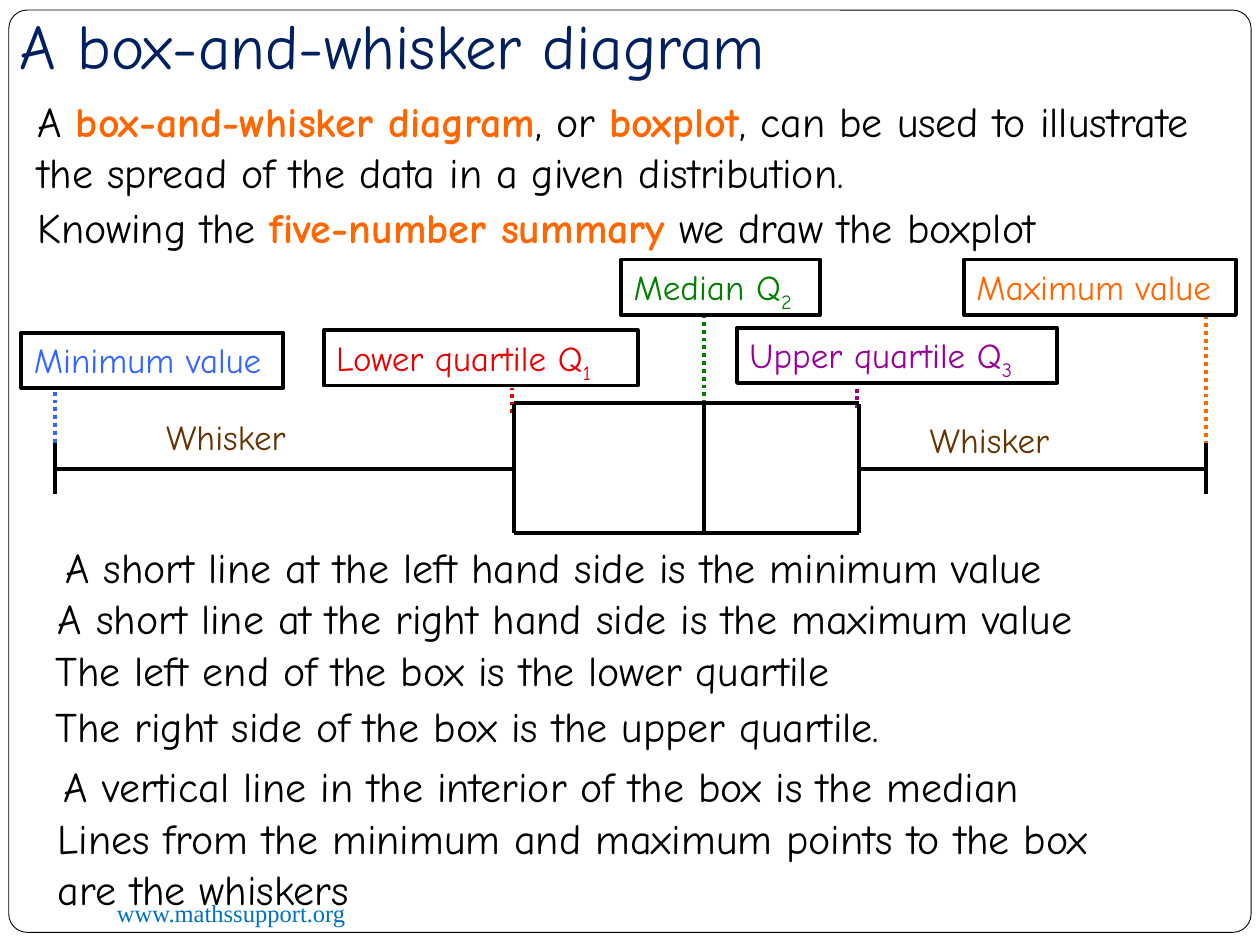
"""Build a slide that explains the box-and-whisker diagram."""
import pptx
import pptx.util
import pptx.dml.color
import pptx.enum.dml
import pptx.enum.shapes
import pptx.enum.text
import pptx.oxml

PX = 9144
FONT = "Comic Neue"
BLACK, WHITE, ORANGE, BROWN = "000000", "FFFFFF", "FF6600", "663300"
TITLE = ("A box-and-whisker diagram", (6, 1, 850, 74))
FOOTER = ("www.mathssupport.org", (83, 708, 325, 34))

# Text between asterisks is a highlighted key term.
STATEMENTS = [
    ("A *box-and-whisker diagram*, or *boxplot*, can be used to illustrate "
     "the spread of the data in a given distribution.", (20, 71, 947, 91)),
    ("Knowing the *five-number summary* we draw the boxplot", (20, 155, 966, 50)),
    ("The left end of the box is the lower quartile", (34, 507, 903, 50)),
    ("The right side of the box is the upper quartile.", (34, 551, 903, 50)),
    ("A vertical line in the interior of the box is the median", (41, 599, 926, 50)),
    ("A short line at the left hand side is the minimum value", (42, 425, 939, 50)),
    ("A short line at the right hand side is the maximum value", (36, 465, 939, 50)),
    ("Lines from the minimum and maximum points to the box are the whiskers",
     (36, 640, 873, 91)),
]
# Label, subscript, colour, label box, dotted stem as x, bottom, top
LABELS = [
    ("Minimum value", "", "3366FF", (17, 264, 208, 44), (44, 370, 310)),
    ("Lower quartile Q", "1", "E60000", (257, 262, 249, 44), (406, 328, 308)),
    ("Median Q", "2", "008000", (493, 206, 158, 44), (559, 327, 247)),
    ("Upper quartile Q", "3", "990099", (585, 260, 254, 44), (680, 324, 304)),
    ("Maximum value", "", ORANGE, (765, 206, 216, 44), (957, 359, 249)),
]
WHISKERS = [(122, 325, 131, 44), (728, 327, 131, 44)]
MINIMUM, LOWER, MEDIAN, UPPER, MAXIMUM = 44, 408, 559, 682, 957
TOP, AXIS, BOTTOM, CAP = 321, 372, 423, 20


def color(value):
    return pptx.dml.color.RGBColor.from_string(value)


def scaled(lengths):
    return [length * PX for length in lengths]


def set_font(font, size, shade, name=FONT):
    font.size, font.name = pptx.util.Pt(size), name
    font.color.rgb = color(shade)


def write(shape, text, size, shade, name=FONT, subscript=""):
    frame = shape.text_frame
    frame.word_wrap = True
    frame.vertical_anchor = pptx.enum.text.MSO_ANCHOR.TOP
    para = frame.paragraphs[0]
    para.alignment = pptx.enum.text.PP_ALIGN.LEFT
    set_font(para.font, size, shade, name)
    for index, part in enumerate(text.split("*")):
        span = para.add_run()
        span.text = part
        set_font(span.font, size, ORANGE if index % 2 else shade, name)
        span.font.bold = bool(index % 2)
    if subscript:
        span = para.add_run()
        span.text = subscript
        set_font(span.font, size, shade, name)
        span.font._element.set("baseline", "-25000")
    return frame


def add_text(page, text, place, size, shade, name=FONT):
    return write(page.shapes.add_textbox(*scaled(place)), text, size, shade, name)


def add_panel(page, kind, place, width):
    panel = page.shapes.add_shape(kind, *scaled(place))
    panel.shadow.inherit = False
    panel.fill.solid()
    panel.fill.fore_color.rgb = color(WHITE)
    panel.line.color.rgb = color(BLACK)
    panel.line.width = pptx.util.Pt(width)
    return panel


def add_line(page, ends, shade=BLACK, dotted=False):
    straight = pptx.enum.shapes.MSO_CONNECTOR.STRAIGHT
    line = page.shapes.add_connector(straight, *scaled(ends))
    line.line.color.rgb = color(shade)
    line.line.width = pptx.util.Pt(2.25)
    if dotted:
        line.line.dash_style = pptx.enum.dml.MSO_LINE.ROUND_DOT
    line._element.spPr.append(pptx.oxml.parse_xml(
        '<a:effectLst xmlns:a="http://schemas.openxmlformats.org/drawingml/2006/main"/>'))


def add_boxplot(page):
    for start, end in [(MINIMUM, LOWER - 2), (UPPER, MAXIMUM)]:
        add_line(page, (start, AXIS, end, AXIS))
    for x in (MINIMUM, MAXIMUM):
        add_line(page, (x, AXIS - CAP, x, AXIS + CAP))
    for x in (LOWER, MEDIAN, UPPER):
        add_line(page, (x, TOP, x, BOTTOM))
    for y in (TOP - 1, BOTTOM):
        add_line(page, (LOWER, y, UPPER, y))


def main():
    shapes = pptx.enum.shapes.MSO_SHAPE
    deck = pptx.Presentation()
    deck.slide_width, deck.slide_height = scaled((1000, 750))
    page = deck.slides.add_slide(deck.slide_layouts[6])
    border = add_panel(page, shapes.ROUNDED_RECTANGLE, (7, 8, 986, 732), 0.5)
    border.adjustments[0] = 0.02
    add_text(page, *FOOTER, 14, "0070C0", "Times New Roman")
    for text, subscript, shade, place, (x, low, high) in LABELS:
        add_line(page, (x, low, x, high), shade, dotted=True)
        label = add_panel(page, shapes.RECTANGLE, place, 2.25)
        write(label, text, 20, shade, subscript=subscript)
    add_boxplot(page)
    heading = add_text(page, *TITLE, 36, "002060")
    heading.vertical_anchor = pptx.enum.text.MSO_ANCHOR.BOTTOM
    heading.margin_bottom = 10 * PX
    for text, place in STATEMENTS:
        add_text(page, text, place, 24, BLACK)
    for place in WHISKERS:
        add_text(page, "Whisker", place, 20, BROWN)
    deck.save("out.pptx")


if __name__ == "__main__":
    main()
